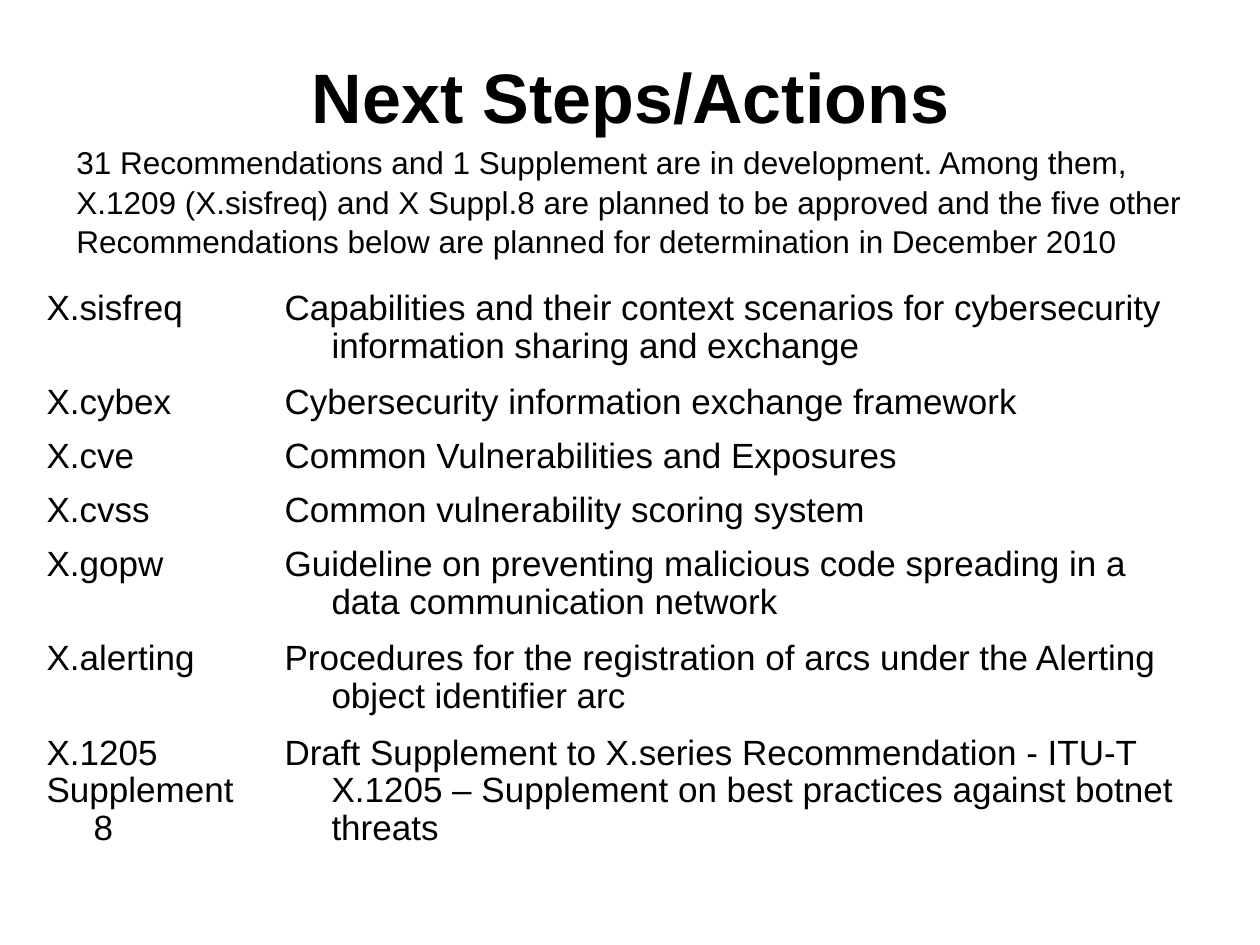
"""Build the Next Steps/Actions slide with its table of planned Recommendations."""
from lxml.etree import SubElement
from pptx import Presentation
from pptx.dml.color import RGBColor
from pptx.enum.text import MSO_ANCHOR, PP_ALIGN
from pptx.oxml.ns import qn
from pptx.util import Pt

TITLE = "Next Steps/Actions"
SUMMARY = (
    "31 Recommendations and 1 Supplement are in development. Among them, "
    "X.1209 (X.sisfreq) and X Suppl.8 are planned to be approved and the five other "
    "Recommendations below are planned for determination in December 2010"
)
RECOMMENDATIONS = [
    (["X.sisfreq"], "Capabilities and their context scenarios for cybersecurity "
                    "information sharing and exchange", 88),
    (["X.cybex"], "Cybersecurity information exchange framework", 54),
    (["X.cve"], "Common Vulnerabilities and Exposures", 54),
    (["X.cvss"], "Common vulnerability scoring system", 54),
    (["X.gopw"], "Guideline on preventing malicious code spreading in a "
                 "data communication network", 88),
    (["X.alerting"], "Procedures for the registration of arcs under the Alerting "
                     "object identifier arc", 88),
    (["X.1205", "Supplement 8"], "Draft Supplement to X.series Recommendation - ITU-T X.1205 – "
                                 "Supplement on best practices against botnet threats", 122),
]
COLUMN_WIDTHS = [238, 939]
TABLE_LEFT, TABLE_TOP = 34, 284
HANGING_INDENT = 47
COLORS = {"text": "000000", "background": "FFFFFF"}
FONT = "Arial"
EMU_PER_PX = 914400 // 126


def px(length):
    return length * EMU_PER_PX


def write(frame, lines, size, bold=False, align=PP_ALIGN.LEFT, spacing=1.0, hanging=0):
    frame.word_wrap = True
    for index, line in enumerate(lines):
        paragraph = frame.add_paragraph() if index else frame.paragraphs[0]
        paragraph.alignment = align
        paragraph.line_spacing = spacing
        if hanging:
            properties = paragraph._p.get_or_add_pPr()
            properties.set("marL", str(px(hanging)))
            properties.set("indent", str(-px(hanging)))
        run = paragraph.add_run()
        run.text = line
        run.font.name = FONT
        run.font.size = Pt(size)
        run.font.bold = bold
        run.font.color.rgb = RGBColor.from_string(COLORS["text"])


def clear_cell(cell):
    properties = cell._tc.get_or_add_tcPr()
    for side in ("a:lnL", "a:lnR", "a:lnT", "a:lnB"):
        border = SubElement(properties, qn(side), w="0")
        SubElement(border, qn("a:noFill"))
    cell.fill.background()


def add_recommendations(slide):
    heights = [height for _, _, height in RECOMMENDATIONS]
    table = slide.shapes.add_table(
        len(RECOMMENDATIONS), len(COLUMN_WIDTHS), px(TABLE_LEFT), px(TABLE_TOP),
        px(sum(COLUMN_WIDTHS)), px(sum(heights))).table
    table.first_row = False
    table.horz_banding = False
    for column, width in zip(table.columns, COLUMN_WIDTHS):
        column.width = px(width)
    for row, (names, subject, height) in zip(table.rows, RECOMMENDATIONS):
        row.height = px(height)
        for cell, lines in zip(row.cells, (names, [subject])):
            clear_cell(cell)
            write(cell.text_frame, lines, 20, spacing=0.97, hanging=HANGING_INDENT)


def main():
    deck = Presentation()
    deck.slide_width, deck.slide_height = px(1260), px(945)
    slide = deck.slides.add_slide(deck.slide_layouts[6])
    slide.background.fill.solid()
    slide.background.fill.fore_color.rgb = RGBColor.from_string(COLORS["background"])

    title = slide.shapes.add_textbox(px(42), px(45), px(1177), px(102)).text_frame
    title.vertical_anchor = MSO_ANCHOR.MIDDLE
    write(title, [TITLE], 40, bold=True, align=PP_ALIGN.CENTER)
    add_recommendations(slide)
    summary = slide.shapes.add_textbox(px(64), px(135), px(1142), px(126)).text_frame
    write(summary, [SUMMARY], 18, spacing=1.05)
    deck.save("out.pptx")


if __name__ == "__main__":
    main()
